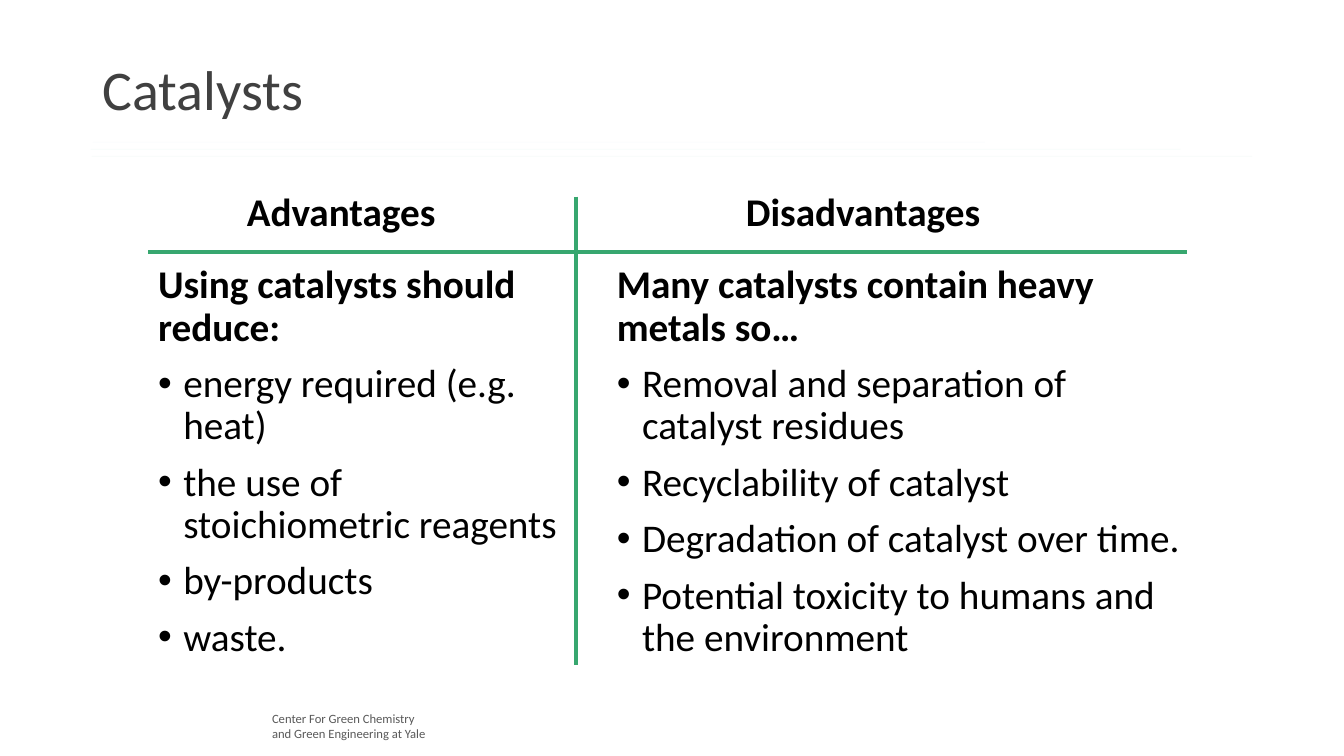
"""Build the catalysts slide comparing advantages and disadvantages."""
from dataclasses import dataclass

from lxml.etree import SubElement
from pptx import Presentation
from pptx.dml.color import RGBColor
from pptx.enum.shapes import MSO_CONNECTOR
from pptx.enum.text import MSO_ANCHOR, MSO_AUTO_SIZE, PP_ALIGN
from pptx.oxml.ns import qn
from pptx.util import Inches, Pt

TITLE = "Catalysts"
FOOTER = ["Center For Green Chemistry", "and Green Engineering at Yale"]
COLUMNS = [
    {
        "heading": "Advantages",
        "heading_left": 2.35,
        "heading_width": 2.1,
        "left": 1.47,
        "width": 4.23,
        "lead": "Using catalysts should reduce:",
        "points": [
            "energy required (e.g. heat)",
            "the use of stoichiometric reagents",
            "by-products",
            "waste.",
        ],
    },
    {
        "heading": "Disadvantages",
        "heading_left": 7.3,
        "heading_width": 2.55,
        "left": 6.02,
        "width": 5.9,
        "lead": "Many catalysts contain heavy metals so…",
        "points": [
            "Removal and separation of catalyst residues",
            "Recyclability of catalyst",
            "Degradation of catalyst over time.",
            "Potential toxicity to humans and the environment",
        ],
    },
]
TITLE_RULES = [(0.92, 9.77, "4EB3CF"), (0.9, 11.71, "44C1A3"), (0.91, 12.42, "37A76F")]
RULE_TOP, RULE_GAP = 1.41, 0.07
DIVIDERS = [(1.47, 2.5, 11.77, 2.5), (5.71, 1.95, 5.71, 6.6)]
HEADING_TOP, HEADING_HEIGHT = 1.81, 0.57
BODY_TOP, BODY_HEIGHT = 2.58, 4.02


@dataclass(frozen=True)
class Theme:
    font: str = "Calibri"
    text: str = "000000"
    title: str = "404040"
    footer: str = "595959"
    divider: str = "37A76F"
    title_size: int = 40
    body_size: int = 28
    footer_size: int = 9
    divider_width: float = 3
    rule_width: float = 0.5
    rule_alpha: int = 4000


THEME = Theme()


def style(paragraph, size, color, bold=False):
    for run in paragraph.runs:
        run.font.name = THEME.font
        run.font.size = Pt(size)
        run.font.bold = bold
        run.font.color.rgb = RGBColor.from_string(color)


def add_text(slide, box, lines, size, color, bold=False, wrap=True):
    frame = slide.shapes.add_textbox(*map(Inches, box)).text_frame
    frame.word_wrap = wrap
    frame.text = "\n".join(lines)
    for paragraph in frame.paragraphs:
        style(paragraph, size, color, bold)
    return frame


def add_line(slide, ends, color, width, alpha=None):
    line = slide.shapes.add_connector(MSO_CONNECTOR.STRAIGHT, *map(Inches, ends))
    line.line.color.rgb = RGBColor.from_string(color)
    line.line.width = Pt(width)
    properties = line.element.spPr
    if alpha is not None:
        SubElement(next(properties.iter(qn("a:srgbClr"))), qn("a:alpha"), val=str(alpha))
    SubElement(properties, qn("a:effectLst"))


def add_bullet(paragraph):
    properties = paragraph._p.get_or_add_pPr()
    properties.set("marL", str(Inches(0.25)))
    properties.set("indent", str(Inches(-0.25)))
    SubElement(properties, qn("a:buFont"), typeface="Arial")
    SubElement(properties, qn("a:buChar"), char="•")


def add_title(slide):
    title = slide.shapes.title
    title.left, title.top, title.width, title.height = map(Inches, (0.92, 0.19, 11.5, 1.45))
    frame = title.text_frame
    frame.text = TITLE
    frame.vertical_anchor = MSO_ANCHOR.MIDDLE
    frame.auto_size = MSO_AUTO_SIZE.NONE
    paragraph = frame.paragraphs[0]
    paragraph.alignment = PP_ALIGN.LEFT
    paragraph.line_spacing = 0.9
    style(paragraph, THEME.title_size, THEME.title)


def add_column(slide, column):
    heading_box = (column["heading_left"], HEADING_TOP, column["heading_width"], HEADING_HEIGHT)
    add_text(slide, heading_box, [column["heading"]], THEME.body_size, THEME.text, True, False)
    body_box = (column["left"], BODY_TOP, column["width"], BODY_HEIGHT)
    lines = [column["lead"], *column["points"]]
    frame = add_text(slide, body_box, lines, THEME.body_size, THEME.text)
    for index, paragraph in enumerate(frame.paragraphs):
        if index:
            add_bullet(paragraph)
            paragraph.space_before = Pt(10)
        else:
            style(paragraph, THEME.body_size, THEME.text, True)
        paragraph.line_spacing = 0.9


def main():
    presentation = Presentation()
    presentation.slide_width, presentation.slide_height = Inches(13.33), Inches(7.5)
    slide = presentation.slides.add_slide(presentation.slide_layouts[5])
    add_text(slide, (2.6, 7, 1.86, 0.4), FOOTER, THEME.footer_size, THEME.footer)
    for index, (start, end, color) in enumerate(TITLE_RULES):
        top = RULE_TOP + index * RULE_GAP
        add_line(slide, (start, top, end, top), color, THEME.rule_width, THEME.rule_alpha)
    add_title(slide)
    for ends in DIVIDERS:
        add_line(slide, ends, THEME.divider, THEME.divider_width)
    for column in COLUMNS:
        add_column(slide, column)
    presentation.save("out.pptx")


if __name__ == "__main__":
    main()
